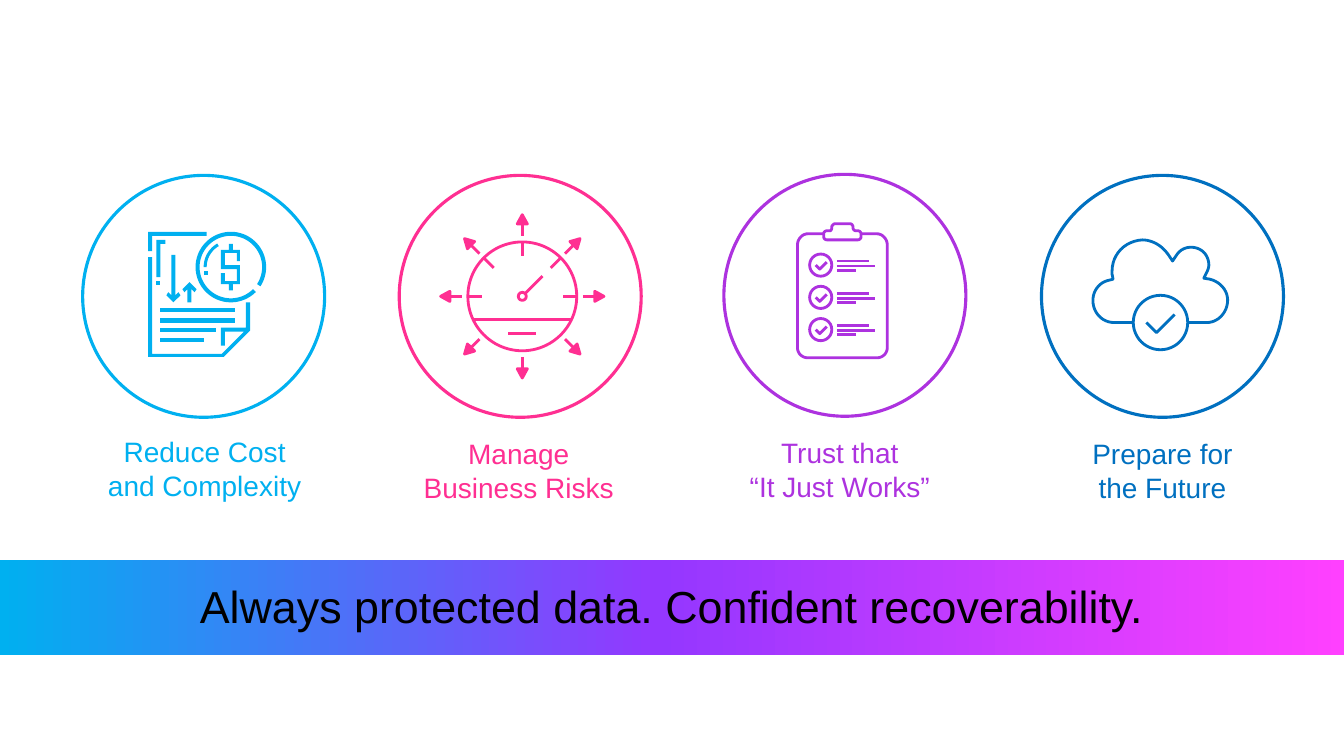
import copy
import math
from dataclasses import dataclass
from typing import Callable

import pptx
import pptx.dml.color
import pptx.enum.shapes
import pptx.enum.text
import pptx.oxml.ns
import pptx.oxml.xmlchemy
import pptx.util

Point = tuple[float, float]
SHAPES = pptx.enum.shapes.MSO_SHAPE


def inch(value: float) -> int:
    """Turn inches into a length."""
    return pptx.util.Cm(value * 2.54)


def colour(hex_code: str) -> pptx.dml.color.RGBColor:
    return pptx.dml.color.RGBColor.from_string(hex_code)


def style(shape, fill: str = "", line: str = "", width: float = 2) -> None:
    shape.shadow.inherit = False
    if fill:
        shape.fill.solid()
        shape.fill.fore_color.rgb = colour(fill)
    else:
        shape.fill.background()
    if line:
        shape.line.color.rgb = colour(line)
        shape.line.width = pptx.util.Pt(width)
    else:
        shape.line.fill.background()


def write(shape, text: str, size: float, hex_code: str, inset: Point) -> None:
    frame = shape.text_frame
    frame.text = text
    frame.word_wrap = True
    frame.auto_size = pptx.enum.text.MSO_AUTO_SIZE.NONE
    frame.vertical_anchor = pptx.enum.text.MSO_ANCHOR.TOP
    frame.margin_left = frame.margin_right = inch(inset[0])
    frame.margin_top = frame.margin_bottom = inch(inset[1])
    paragraph = frame.paragraphs[0]
    paragraph.alignment = pptx.enum.text.PP_ALIGN.CENTER
    paragraph.space_after = pptx.util.Pt(10)
    for run in paragraph.runs:
        run.font.size = pptx.util.Pt(size)
        run.font.name = "Arial"
        run.font.color.rgb = colour(hex_code)


def polar(centre: Point, radius: float, degrees: float) -> Point:
    angle = math.radians(degrees)
    return centre[0] + radius * math.cos(angle), centre[1] + radius * math.sin(angle)


def band(centre: Point, inner: float, outer: float, start: int, end: int) -> list[Point]:
    """Outline of a ring section."""
    angles = range(start, end + 1, 3)
    return ([polar(centre, outer, angle) for angle in angles]
            + [polar(centre, inner, angle) for angle in reversed(angles)])


def trace(*steps: tuple) -> list[Point]:
    """Points of a path: two numbers are a corner, six a Bézier curve."""
    points = []
    for step in steps:
        if len(step) == 2:
            points.append(step)
            continue
        start, count = points[-1], 12
        for index in range(1, count + 1):
            t = index / count
            weights = ((1 - t) ** 3, 3 * t * (1 - t) ** 2, 3 * t * t * (1 - t), t ** 3)
            points.append(tuple(
                sum(weight * value for weight, value in
                    zip(weights, (start[axis], *step[axis::2]))) for axis in (0, 1)))
    return points


def outline(group, points: list[Point], fill: str = "", line: str = "", close: bool = True) -> None:
    corners = [(inch(x), inch(y)) for x, y in points]
    builder = group.shapes.build_freeform(*corners[0])
    builder.add_line_segments(corners[1:], close=close)
    style(builder.convert_to_shape(), fill, line)


def stroke(group, start: Point, end: Point, hex_code: str) -> None:
    connector = group.shapes.add_connector(
        pptx.enum.shapes.MSO_CONNECTOR.STRAIGHT, *map(inch, (*start, *end)))
    connector.line.color.rgb = colour(hex_code)
    connector.line.width = pptx.util.Pt(2)
    connector._element.spPr.append(pptx.oxml.xmlchemy.OxmlElement("a:effectLst"))


def circle(group, centre: Point, radius: float, hex_code: str, width: float = 2) -> None:
    left, top = centre[0] - radius, centre[1] - radius
    shape = group.shapes.add_shape(
        SHAPES.OVAL, *map(inch, (left, top, 2 * radius, 2 * radius)))
    style(shape, line=hex_code, width=width)


# Icons
def draw_invoice(group, hex_code: str) -> None:
    coin = (2.29, 2.65)
    outlines = [band(coin, 0.24, 0.27, 180, 241), band(coin, 0.31, 0.35, 45, 394)]
    bars = [(2.02, 2.69, 0.04), (1.55, 2.79, 0.04), (1.59, 3.06, 0.74),
            (1.59, 3.16, 0.74), (1.59, 3.25, 0.55), (1.59, 3.35, 0.43)]
    for left, top, width in bars:
        right, bottom = left + width, top + 0.04
        outlines.append([(left, top), (right, top), (right, bottom), (left, bottom)])
    outlines += [
        # page highlight, dollar sign, page corner, page
        [(1.59, 2.75), (1.55, 2.75), (1.55, 2.38), (1.64, 2.38), (1.64, 2.42), (1.59, 2.42)],
        [(2.38, 2.59), (2.38, 2.48), (2.31, 2.48), (2.31, 2.42), (2.27, 2.42), (2.27, 2.48),
         (2.19, 2.48), (2.19, 2.67), (2.35, 2.67), (2.35, 2.79), (2.23, 2.79), (2.23, 2.71),
         (2.19, 2.71), (2.19, 2.82), (2.27, 2.82), (2.27, 2.88), (2.31, 2.88), (2.31, 2.82),
         (2.38, 2.82), (2.38, 2.63), (2.23, 2.63), (2.23, 2.51), (2.35, 2.51), (2.35, 2.59)],
        [(1.51, 2.34), (2.05, 2.34), (2.05, 2.3), (1.47, 2.3), (1.47, 2.49), (1.51, 2.49)],
        [(2.44, 3.25), (2.19, 3.25), (2.19, 3.43), (2.23, 3.43), (2.23, 3.29), (2.42, 3.29),
         (2.2, 3.51), (1.51, 3.51), (1.51, 2.55), (1.47, 2.55), (1.47, 3.54), (2.22, 3.54),
         (2.48, 3.28), (2.48, 3), (2.44, 3)]]
    # down and up arrows: middle, tip, tail and direction
    for middle, tip, tail, way in ((1.72, 3, 2.53, -1), (1.88, 2.8, 3, 1)):
        neck, barb = tip + 0.07 * way, tip + 0.1 * way
        outlines.append([
            (middle - 0.07, neck), (middle - 0.05, barb), (middle - 0.02, neck),
            (middle - 0.02, tail), (middle + 0.02, tail), (middle + 0.02, neck),
            (middle + 0.05, barb), (middle + 0.07, neck), (middle, tip)])
    for points in outlines:
        outline(group, points, fill=hex_code)


def draw_gauge(group, hex_code: str) -> None:
    centre = (5.18, 2.94)
    circle(group, centre, 0.54, hex_code)
    circle(group, centre, 0.04, hex_code)
    for start, end in (((4.69, 3.17), (5.67, 3.17)), ((5.04, 3.31), (5.32, 3.31)),
                       ((5.21, 2.91), (5.38, 2.74))):
        stroke(group, start, end, hex_code)
    for angle in range(0, 360, 45):
        if angle == 0 or angle >= 180:
            stroke(group, polar(centre, 0.54, angle), polar(centre, 0.4, angle), hex_code)
        stroke(group, polar(centre, 0.6, angle), polar(centre, 0.73, angle), hex_code)
        head = [polar(centre, 0.72, angle - 4), polar(centre, 0.81, angle),
                polar(centre, 0.72, angle + 4)]
        outline(group, head, fill=hex_code, line=hex_code)


def draw_checklist(group, hex_code: str) -> None:
    board = trace(
        (8.54, 2.32), (8.7, 2.32), (8.75, 2.32, 8.8, 2.37, 8.8, 2.43), (8.8, 3.45),
        (8.8, 3.51, 8.75, 3.55, 8.7, 3.55), (8.01, 3.55), (7.96, 3.55, 7.91, 3.51, 7.91, 3.45),
        (7.91, 2.43), (7.91, 2.37, 7.96, 2.32, 8.01, 2.32), (8.17, 2.32))
    outline(group, board, line=hex_code, close=False)
    clip = trace(
        (8.46, 2.26), (8.46, 2.25), (8.46, 2.24, 8.45, 2.22, 8.43, 2.22), (8.28, 2.22),
        (8.27, 2.22, 8.25, 2.24, 8.25, 2.25), (8.25, 2.26), (8.25, 2.28, 8.24, 2.29, 8.23, 2.29),
        (8.2, 2.29), (8.19, 2.29, 8.17, 2.3, 8.17, 2.32), (8.17, 2.35),
        (8.17, 2.37, 8.19, 2.38, 8.2, 2.38), (8.51, 2.38), (8.52, 2.38, 8.54, 2.37, 8.54, 2.35),
        (8.54, 2.32), (8.54, 2.3, 8.52, 2.29, 8.51, 2.29), (8.49, 2.29),
        (8.47, 2.29, 8.46, 2.27, 8.46, 2.26))
    outline(group, clip, line=hex_code)
    for row in range(3):
        middle = 2.63 + 0.32 * row
        circle(group, (8.14, middle), 0.11, hex_code)
        tick = [(8.09, middle), (8.13, middle + 0.04), (8.2, middle - 0.03)]
        outline(group, tick, line=hex_code, close=False)
        for offset, right in ((-0.04, 8.62), (0.01, 8.68), (0.05, 8.49)):
            stroke(group, (8.3, middle + offset), (right, middle + offset), hex_code)


def draw_cloud(group, hex_code: str) -> None:
    cloud = trace(
        (11.24, 3.2), (11.05, 3.2), (10.93, 3.2, 10.84, 3.1, 10.84, 2.98),
        (10.84, 2.89, 10.9, 2.8, 11, 2.78), (11.04, 2.77), (11.03, 2.72),
        (11.03, 2.71, 11.03, 2.7, 11.03, 2.69), (11.03, 2.52, 11.16, 2.39, 11.33, 2.38),
        (11.43, 2.38, 11.53, 2.44, 11.59, 2.53), (11.63, 2.59), (11.67, 2.53),
        (11.72, 2.45, 11.83, 2.43, 11.91, 2.48), (11.96, 2.51, 11.99, 2.57, 11.99, 2.63),
        (11.99, 2.65, 11.98, 2.68, 11.97, 2.7), (11.94, 2.76), (12, 2.77),
        (12.12, 2.8, 12.2, 2.91, 12.17, 3.03), (12.15, 3.12, 12.07, 3.2, 11.97, 3.2), (11.78, 3.2))
    outline(group, cloud, line=hex_code, close=False)
    circle(group, (11.51, 3.2), 0.27, hex_code)
    outline(group, [(11.37, 3.2), (11.47, 3.3), (11.65, 3.12)], line=hex_code, close=False)


@dataclass
class Benefit:
    caption: str
    hex_code: str
    centre: Point
    box: tuple[float, float, float, float]
    draw_icon: Callable


BENEFITS = [
    Benefit("Reduce Cost\vand Complexity", "00B0F0", (2.02, 2.94), (0.76, 4.24, 2.54, 1.11), draw_invoice),
    Benefit("Trust that\v“It Just Works”", "AD32DF", (8.38, 2.93), (7.06, 4.25, 2.54, 1.14), draw_checklist),
    Benefit("Prepare for\vthe Future", "0070C0", (11.53, 2.94), (10.58, 4.26, 1.9, 0.81), draw_cloud),
    Benefit("Manage\vBusiness Risks", "FF2F92", (5.16, 2.94), (3.85, 4.26, 2.59, 0.81), draw_gauge)]


def add_benefit(slide, benefit: Benefit) -> None:
    group = slide.shapes.add_group_shape()
    caption = group.shapes.add_textbox(*map(inch, benefit.box))
    write(caption, benefit.caption, 20, benefit.hex_code, (0.13, 0.07))
    circle(group, benefit.centre, 1.2, benefit.hex_code, 2.25)
    benefit.draw_icon(group, benefit.hex_code)


def add_banner(slide) -> None:
    banner = slide.shapes.add_shape(SHAPES.RECTANGLE, *map(inch, (0, 5.56, 13.33, 0.94)))
    style(banner)
    banner.fill.gradient()
    banner.fill.gradient_angle = 0
    stops = banner._element.find(".//" + pptx.oxml.ns.qn("a:gsLst"))
    stops.insert(1, copy.deepcopy(stops[0]))
    for stop, position, hex_code in zip(
            banner.fill.gradient_stops, (0, 0.49, 1), ("00B0F0", "9437FF", "FF40FF")):
        stop.position = position
        stop.color.rgb = colour(hex_code)
    # The title stands in front of the banner
    title = slide.shapes.title
    title.left, title.top, title.width, title.height = map(inch, (0.73, 5.74, 11.87, 0.54))
    write(title, "Always protected data. Confident recoverability.", 32, "000000", (0, 0))
    banner._element.addnext(title._element)


def main() -> None:
    presentation = pptx.Presentation()
    presentation.slide_width, presentation.slide_height = inch(13.33), inch(7.5)
    slide = presentation.slides.add_slide(presentation.slide_layouts[5])
    for benefit in BENEFITS:
        add_benefit(slide, benefit)
    add_banner(slide)
    presentation.save("out.pptx")


if __name__ == "__main__":
    main()
